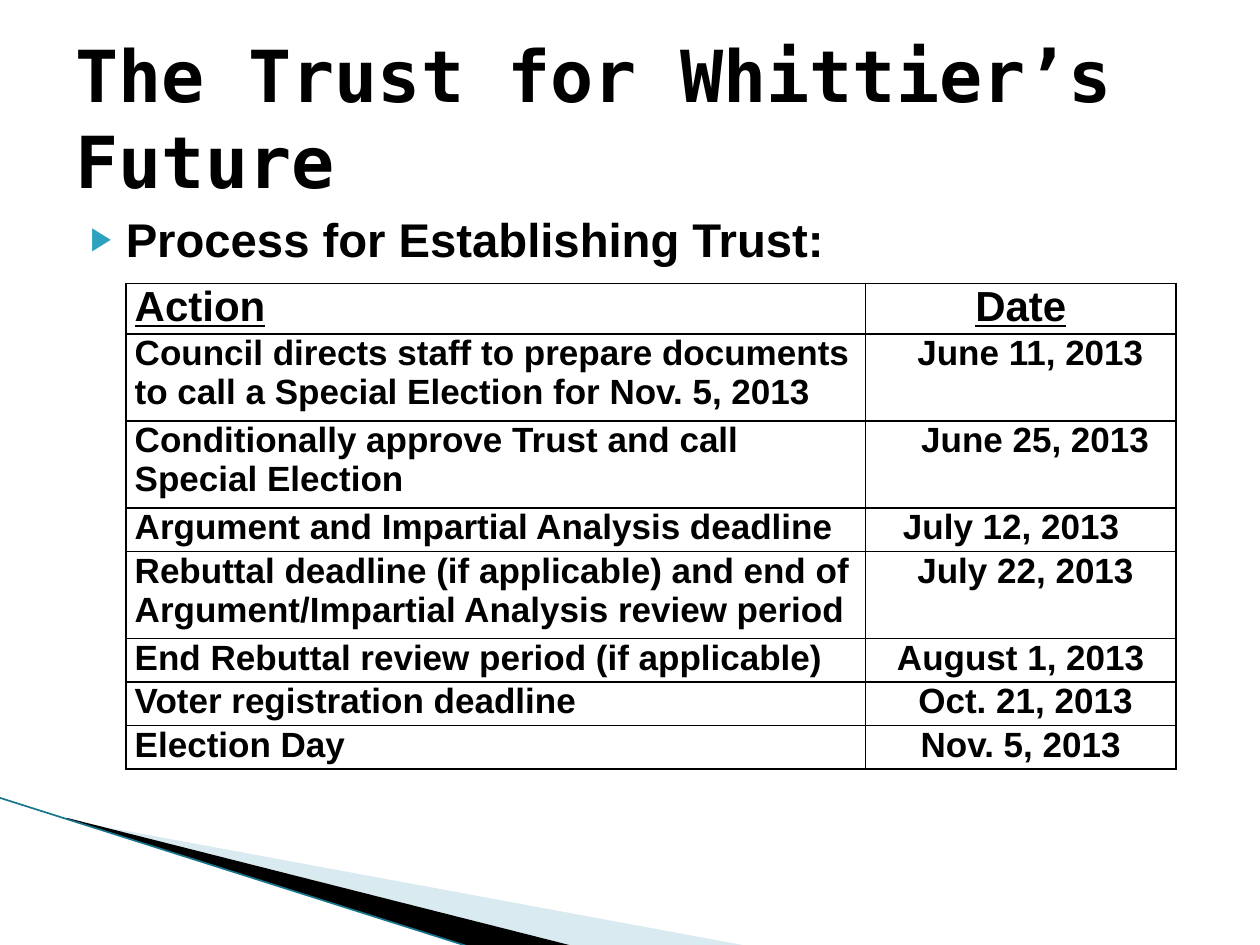
from dataclasses import dataclass

from lxml import etree
from pptx import Presentation
from pptx.dml.color import RGBColor
from pptx.enum import text
from pptx.oxml.ns import qn
from pptx.util import Pt


@dataclass(frozen=True)
class Theme:
    ink: str = "000000"
    bullet: str = "2DA2BF"
    pale: str = "A0CBDC"
    edge: str = "17768C"
    heading_font: str = "DejaVu Sans Mono"
    body_font: str = "Arial"
    title: int = 41
    lead: int = 27
    header: int = 24
    cell: int = 20


THEME = Theme()
SPACE = 5.5  # step by which dates are nudged off centre

# action, date, nudge of the date in steps (right is positive), row height
SCHEDULE = [
    ("Action", "Date", 0, 27.6),
    ("Council directs staff to prepare documents to call a Special Election for Nov. 5, 2013",
     "June 11, 2013", 2, 49.7),
    ("Conditionally approve Trust and call Special Election", "June 25, 2013", 3, 49.7),
    ("Argument and Impartial Analysis deadline", "July 12, 2013", -2, 24.9),
    ("Rebuttal deadline (if applicable) and end of Argument/Impartial Analysis review period",
     "July 22, 2013", 1, 49.7),
    ("End Rebuttal review period (if applicable)", "August 1, 2013", 0, 24.9),
    ("Voter registration deadline", "Oct. 21, 2013", 1, 24.9),
    ("Election Day", "Nov. 5, 2013", 0, 24.9),
]


def color(value):
    return RGBColor.from_string(value)


def add_xml(parent, tag, **attributes):
    return etree.SubElement(parent, qn(tag), attributes)


def add_run(p, words, size, font=THEME.body_font, underline=None):
    r = p.add_run()
    r.text = words
    r.font.name, r.font.size = font, Pt(size)
    r.font.bold, r.font.underline = True, underline
    r.font.color.rgb = color(THEME.ink)


def add_wedge(s, points, fill, alpha=None):
    start, *rest = [(Pt(x), Pt(y)) for x, y in points]
    builder = s.shapes.build_freeform(*start)
    builder.add_line_segments(rest, close=True)
    sp = builder.convert_to_shape()
    sp.shadow.inherit = False
    sp.line.fill.background()
    sp.fill.solid()
    sp.fill.fore_color.rgb = color(fill)
    if alpha:
        clr = sp.fill._xPr.find(".//" + qn("a:srgbClr"))
        add_xml(clr, "a:alpha", val=str(alpha * 1000))


def add_corner(s, x, y, w, h):
    """Swoosh running from the left edge down to the bottom edge."""
    bottom = y + h
    add_wedge(s, [(x + 40, y + 13), (x + w, bottom), (x + 329, bottom), (x + 40, y + 12.2)],
              THEME.pale, alpha=40)
    add_wedge(s, [(x + 38.5, y + 11.5), (x + 329, bottom), (x + 268, bottom), (x + 39, y + 12.2)],
              THEME.ink)
    line = s.shapes.add_connector(1, Pt(x), Pt(y), Pt(x + 268), Pt(bottom))
    line.line.color.rgb = color(THEME.edge)
    line.line.width = Pt(0.95)
    add_xml(line._element.spPr, "a:effectLst")


def add_title(s, x, y, w, h):
    title = s.shapes.title
    title.left, title.top, title.width, title.height = map(Pt, (x, y, w, h))
    tf = title.text_frame
    tf.word_wrap = True
    tf.auto_size = text.MSO_AUTO_SIZE.NONE
    tf.vertical_anchor = text.MSO_ANCHOR.MIDDLE
    p = tf.paragraphs[0]
    p.alignment = text.PP_ALIGN.LEFT
    add_run(p, "The Trust for Whittier’s Future", THEME.title, THEME.heading_font)


def add_lead(s, x, y, w, h):
    tf = s.shapes.add_textbox(*map(Pt, (x, y, w, h))).text_frame
    tf.word_wrap = True
    p = tf.paragraphs[0]
    pPr = p._p.get_or_add_pPr()
    pPr.set("marL", str(Pt(28.8)))
    pPr.set("indent", str(Pt(-20.2)))
    add_xml(add_xml(pPr, "a:buClr"), "a:srgbClr", val=THEME.bullet)
    add_xml(pPr, "a:buSzPct", val="68000")
    add_xml(pPr, "a:buFont", typeface=THEME.body_font)
    add_xml(pPr, "a:buChar", char="▶")
    add_run(p, "Process for Establishing Trust:", THEME.lead)


def add_borders(cell):
    tcPr = cell._tc.get_or_add_tcPr()
    for side in "LRTB":
        ln = add_xml(tcPr, f"a:ln{side}", w=str(Pt(1)))
        add_xml(add_xml(ln, "a:solidFill"), "a:srgbClr", val=THEME.ink)


def fill_cell(cell, words, header, align, nudge=0):
    add_borders(cell)
    cell.fill.background()
    cell.margin_top = cell.margin_bottom = 0
    cell.margin_left = Pt(5 + max(nudge, 0) * SPACE)
    cell.margin_right = Pt(5 + max(-nudge, 0) * SPACE)
    p = cell.text_frame.paragraphs[0]
    p.alignment = align
    add_run(p, words, THEME.header if header else THEME.cell, underline=header)


def add_schedule(s, x, y, w, action_width):
    height = sum(row[-1] for row in SCHEDULE)
    table = s.shapes.add_table(len(SCHEDULE), 2, *map(Pt, (x, y, w, height))).table
    table.first_row = table.horz_banding = False
    table.columns[0].width = Pt(action_width)
    table.columns[1].width = Pt(w - action_width)
    for i, (action, date, nudge, row_height) in enumerate(SCHEDULE):
        table.rows[i].height = Pt(row_height)
        fill_cell(table.cell(i, 0), action, i == 0, text.PP_ALIGN.LEFT)
        fill_cell(table.cell(i, 1), date, i == 0, text.PP_ALIGN.CENTER, nudge)


def main():
    prs = Presentation()
    prs.slide_width, prs.slide_height = Pt(720), Pt(540)
    s = prs.slides.add_slide(prs.slide_layouts[5])
    add_corner(s, x=-0.5, y=455.8, w=429, h=85)
    add_title(s, x=36, y=21.6, w=648, h=90)
    add_lead(s, x=36, y=116.6, w=648, h=40)
    add_schedule(s, x=72, y=162, w=600, action_width=422.6)
    prs.save("out.pptx")


if __name__ == "__main__":
    main()
